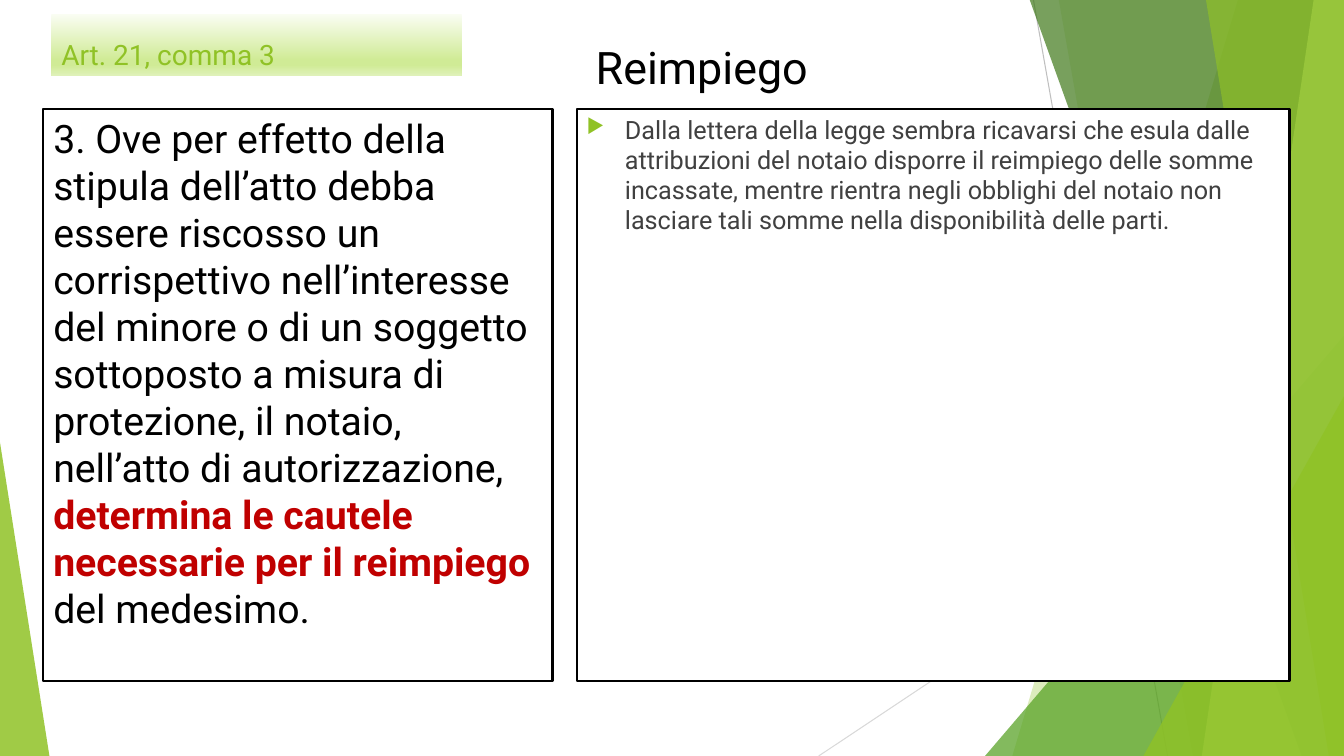
from dataclasses import dataclass

from lxml import etree
from pptx import Presentation
from pptx import util as u
from pptx.dml.color import RGBColor
from pptx.enum import shapes, text
from pptx.oxml import ns


@dataclass(frozen=True)
class Theme:
    font: str = "Roboto"
    green: str = "90C226"
    leaf: str = "54A021"
    forest: str = "3F7819"
    lime: str = "C0E474"
    white: str = "FFFFFF"
    black: str = "000000"
    body: str = "404040"
    accent: str = "C00000"
    rule_dark: str = "BFBFBF"
    rule_light: str = "D9D9D9"
    title_stops: tuple = ((0, "FAFDF3"), (74, "D0EB96"), (83, "D0EB96"), (100, "DFF1B9"))
    label_size: int = 20
    body_size: int = 18
    law_size: int = 28
    heading_size: int = 32
    border: float = 1.5
    hairline: float = 0.75


@dataclass(frozen=True)
class Box:
    left: float
    top: float
    width: float
    height: float

    @property
    def right(self):
        return self.left + self.width

    @property
    def bottom(self):
        return self.top + self.height

    def lengths(self):
        return [u.Inches(v) for v in (self.left, self.top, self.width, self.height)]


THEME = Theme()
PAGE = Box(0, 0, 13.33, 7.5)
LABEL = Box(0.51, 0.14, 4.07, 0.61)
HEADING = Box(5.81, 0.34, 6.67, 0.64)
LAW = Box(0.43, 1.08, 5.05, 5.68)
COMMENT = Box(5.72, 1.08, 7.07, 5.68)


def add_xml(parent, tag, **attributes):
    return etree.SubElement(parent, ns.qn(tag), attributes)


def paint(shape, color, opacity=100):
    """Solid fill without outline or shadow; opacity in percent."""
    shape.shadow.inherit = False
    shape.line.fill.background()
    shape.fill.solid()
    shape.fill.fore_color.rgb = RGBColor.from_string(color)
    if opacity < 100:
        swatch = shape._element.spPr.find(".//" + ns.qn("a:srgbClr"))
        add_xml(swatch, "a:alpha", val=str(opacity * 1000))


def add_hairline(slide, start, end, color):
    points = [u.Inches(v) for v in (*start, *end)]
    line = slide.shapes.add_connector(shapes.MSO_CONNECTOR.STRAIGHT, *points)
    line.line.color.rgb = RGBColor.from_string(color)
    line.line.width = u.Pt(THEME.hairline)
    add_xml(line._element.spPr, "a:effectLst")


def add_band(slide, page, top_left, bottom_left, color, opacity):
    """Slanted band that reaches the right edge of the page."""
    top = page.top - 0.01
    corners = [(top_left, top), (page.right, top), (page.right, page.bottom), (bottom_left, page.bottom)]
    first, *others = [(u.Inches(x), u.Inches(y)) for x, y in corners]
    builder = slide.shapes.build_freeform(*first)
    builder.add_line_segments(others, close=True)
    paint(builder.convert_to_shape(), color, opacity)


def add_corner(slide, box, apex, color, opacity):
    """Triangle whose apex lies at the given share of its width."""
    corner = slide.shapes.add_shape(shapes.MSO_SHAPE.ISOSCELES_TRIANGLE, *box.lengths())
    corner.adjustments[0] = apex
    paint(corner, color, opacity)


def add_backdrop(slide, page):
    def right_corner(width, height):
        return Box(page.right - width, page.bottom - height, width, height)

    add_hairline(slide, (10.25, page.top), (11.58, page.bottom), THEME.rule_dark)
    add_hairline(slide, (page.right, 4.03), (8.12, page.bottom), THEME.rule_light)
    add_band(slide, page, 12.28, 10.04, THEME.green, 30)
    add_band(slide, page, 10.5, 11.83, THEME.green, 20)
    add_corner(slide, right_corner(3.56, 4.17), 1, THEME.leaf, 72)
    add_band(slide, page, 10.21, 12.91, THEME.forest, 70)
    add_band(slide, page, 13.03, 11.92, THEME.lime, 70)
    add_band(slide, page, 11.96, 13.18, THEME.green, 65)
    add_corner(slide, right_corner(1.99, 3.57), 1, THEME.green, 80)
    add_corner(slide, Box(page.left, page.bottom - 3.11, 0.49, 3.11), 0, THEME.green, 85)


def write(shape, size, color, spans, anchor=text.MSO_ANCHOR.TOP):
    """Fill the shape with one paragraph of (wording, accented) spans."""
    frame = shape.text_frame
    frame.word_wrap = True
    frame.vertical_anchor = anchor
    para = frame.paragraphs[0]
    para.alignment = text.PP_ALIGN.LEFT
    para.font.name = THEME.font
    para.font.size = u.Pt(size)
    para.font.color.rgb = RGBColor.from_string(color)
    for wording, accented in spans:
        span = para.add_run()
        span.text = wording
        if accented:
            span.font.bold = True
            span.font.color.rgb = RGBColor.from_string(THEME.accent)
    return para


def add_label(slide, box):
    label = slide.shapes.add_shape(shapes.MSO_SHAPE.RECTANGLE, *box.lengths())
    label.shadow.inherit = False
    label.line.fill.background()
    label.fill.gradient()
    label.fill.gradient_angle = 270
    stops = label._element.spPr.find(".//" + ns.qn("a:gsLst"))
    for old_stop in list(stops):
        stops.remove(old_stop)
    for position, color in THEME.title_stops:
        stop = add_xml(stops, "a:gs", pos=str(position * 1000))
        add_xml(stop, "a:srgbClr", val=color)
    write(label, THEME.label_size, THEME.green, [("Art. 21, comma 3", False)], text.MSO_ANCHOR.BOTTOM)


def add_heading(slide, box):
    heading = slide.shapes.add_textbox(*box.lengths())
    write(heading, THEME.heading_size, THEME.black, [("Reimpiego", False)])
    heading.text_frame.auto_size = text.MSO_AUTO_SIZE.SHAPE_TO_FIT_TEXT


def add_panel(slide, box, size, color, spans):
    panel = slide.shapes.add_shape(shapes.MSO_SHAPE.RECTANGLE, *box.lengths())
    paint(panel, THEME.white)
    panel.line.color.rgb = RGBColor.from_string(THEME.black)
    panel.line.width = u.Pt(THEME.border)
    para = write(panel, size, color, spans)
    para.space_before = u.Pt(10)
    return para


def add_comment(slide, box):
    para = add_panel(slide, box, THEME.body_size, THEME.body, [(
        "Dalla lettera della legge sembra ricavarsi che esula dalle attribuzioni del notaio "
        "disporre il reimpiego delle somme incassate, mentre rientra negli obblighi del notaio "
        "non lasciare tali somme nella disponibilità delle parti.", False)])
    properties = para._p.get_or_add_pPr()
    indent = u.Inches(0.38)
    properties.set("marL", str(indent))
    properties.set("indent", str(-indent))
    bullet = [etree.Element(ns.qn(tag)) for tag in ("a:buClr", "a:buSzPct", "a:buChar")]
    add_xml(bullet[0], "a:srgbClr", val=THEME.green)
    bullet[1].set("val", "80000")
    bullet[2].set("char", "▶")
    place = properties.index(properties.find(ns.qn("a:defRPr")))
    properties[place:place] = bullet


def add_law(slide, box):
    add_panel(slide, box, THEME.law_size, THEME.black, [
        ("3. Ove per effetto della stipula dell’atto debba essere riscosso un corrispettivo "
         "nell’interesse del minore o di un soggetto sottoposto a misura di protezione, "
         "il notaio, nell’atto di autorizzazione, ", False),
        ("determina le cautele necessarie per il reimpiego", True),
        (" del medesimo.", False)])


def main():
    deck = Presentation()
    deck.slide_width, deck.slide_height = PAGE.lengths()[2:]
    slide = deck.slides.add_slide(deck.slide_layouts[6])
    add_backdrop(slide, PAGE)
    add_label(slide, LABEL)
    add_comment(slide, COMMENT)
    add_law(slide, LAW)
    add_heading(slide, HEADING)
    deck.save("out.pptx")


if __name__ == "__main__":
    main()
